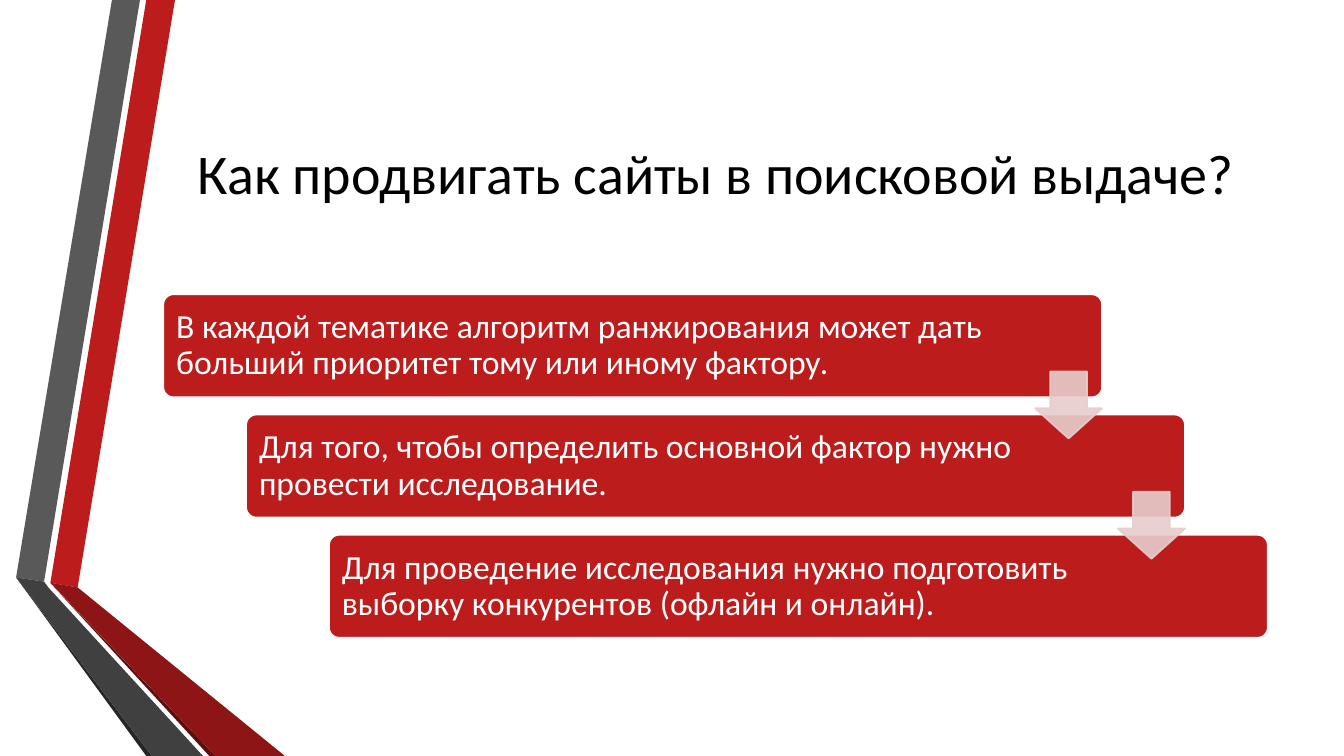
import pptx
import pptx.util
import pptx.dml.color
import pptx.enum.shapes
import pptx.enum.text
import pptx.oxml
import pptx.oxml.ns

Pt = pptx.util.Pt
MSO_SHAPE = pptx.enum.shapes.MSO_SHAPE
PP_ALIGN = pptx.enum.text.PP_ALIGN
MSO_ANCHOR = pptx.enum.text.MSO_ANCHOR

COLOURS = {
    "red": "BC1C1C",
    "dark_red": "8D1515",
    "deep_red": "5E0E0E",
    "grey": "595959",
    "dark_grey": "404040",
    "deep_grey": "262626",
    "pink": "E7CDCD",
    "white": "FFFFFF",
    "black": "000000",
}
FONT = "Calibri"
TITLE = "Как продвигать сайты в поисковой выдаче?"
STEPS = [
    "В каждой тематике алгоритм ранжирования может дать больший приоритет тому или иному фактору.",
    "Для того, чтобы определить основной фактор нужно провести исследование.",
    "Для проведение исследования нужно подготовить выборку конкурентов (офлайн и онлайн).",
]
RIBBON_FACETS = [
    ("red", [(24.5, 416.2), (44, 419.6), (113.5, 0), (93, 0)]),
    ("grey", [(88.5, 0), (68.5, 0), (0, 412.5), (20, 415.5)]),
    ("deep_grey", [(0, 412.5), (93, 540), (97, 540)]),
    ("deep_red", [(24.5, 416.5), (138, 540), (142.5, 540)]),
    ("dark_red", [(24.5, 416.2), (142.5, 540), (192, 540), (44, 419.6)]),
    ("dark_grey", [(0, 412.5), (97, 540), (133.5, 540), (23, 419.6), (20, 415.5)]),
]


def rgb(name):
    """Return the named colour."""
    return pptx.dml.color.RGBColor.from_string(COLOURS[name])


def paint(shape, fill, line=None):
    """Give a shape a flat fill and an optional outline."""
    shape.shadow.inherit = False
    shape.fill.solid()
    shape.fill.fore_color.rgb = rgb(fill)
    if line:
        shape.line.color.rgb = rgb(line)
        shape.line.width = Pt(1.25)
    else:
        shape.line.fill.background()


def set_opacity(shape, percent):
    """Make the fill and outline of a shape partly transparent."""
    for colour in shape._element.spPr.iter(pptx.oxml.ns.qn("a:srgbClr")):
        alpha = pptx.oxml.parse_xml(
            f'<a:alpha {pptx.oxml.ns.nsdecls("a")} val="{percent * 1000}"/>'
        )
        colour.append(alpha)


def style_text(paragraph, size, colour, align):
    """Set the font and alignment of a paragraph."""
    paragraph.font.name = FONT
    paragraph.font.size = Pt(size)
    paragraph.font.color.rgb = rgb(colour)
    paragraph.alignment = align


def add_ribbon(slide, left, top):
    """Draw the folded two-colour ribbon from its top left corner."""
    for colour, corners in RIBBON_FACETS:
        outline = [(Pt(left + x), Pt(top + y)) for x, y in corners]
        builder = slide.shapes.build_freeform(*outline[0])
        builder.add_line_segments(outline[1:], close=True)
        paint(builder.convert_to_shape(), colour)


def add_title(slide, left, top, width, height):
    """Place and format the title."""
    title = slide.shapes.title
    title.left, title.top = Pt(left), Pt(top)
    title.width, title.height = Pt(width), Pt(height)
    title.text_frame.text = TITLE
    title.text_frame.word_wrap = True
    title.text_frame.vertical_anchor = MSO_ANCHOR.MIDDLE
    style_text(title.text_frame.paragraphs[0], 40, "black", PP_ALIGN.CENTER)


def add_staircase(slide, left, top, width, height):
    """Draw the steps going down to the right, joined by arrows."""
    step_width, step_height = 0.85 * width, 0.3 * height
    shift = (width - step_width) / (len(STEPS) - 1)
    drop = (height - step_height) / (len(STEPS) - 1)
    arrow_size = 0.65 * step_height

    for index, wording in enumerate(STEPS):
        step = slide.shapes.add_shape(
            MSO_SHAPE.ROUNDED_RECTANGLE,
            Pt(left + index * shift), Pt(top + index * drop),
            Pt(step_width), Pt(step_height),
        )
        step.adjustments[0] = 0.1
        paint(step, "red", "white")
        frame = step.text_frame
        frame.word_wrap = True
        frame.vertical_anchor = MSO_ANCHOR.MIDDLE
        frame.margin_left = frame.margin_top = frame.margin_bottom = Pt(7.2)
        frame.margin_right = Pt(80)
        frame.text = wording
        paragraph = frame.paragraphs[0]
        style_text(paragraph, 24, "white", PP_ALIGN.LEFT)
        paragraph.line_spacing = 0.9

    for index in range(len(STEPS) - 1):
        arrow = slide.shapes.add_shape(
            MSO_SHAPE.DOWN_ARROW,
            Pt(left + index * shift + step_width - arrow_size),
            Pt(top + index * drop + 0.75 * step_height),
            Pt(arrow_size), Pt(arrow_size),
        )
        arrow.adjustments[0], arrow.adjustments[1] = 0.55, 0.45
        paint(arrow, "pink", "pink")
        set_opacity(arrow, 90)


def main():
    """Build and save the slide."""
    deck = pptx.Presentation()
    deck.slide_width, deck.slide_height = Pt(960), Pt(540)
    slide = deck.slides.add_slide(deck.slide_layouts[5])
    add_ribbon(slide, 11.5, 0)
    add_title(slide, 116.6, 54, 789, 138)
    add_staircase(slide, 116.6, 210.2, 789, 245.4)
    deck.save("out.pptx")


if __name__ == "__main__":
    main()
